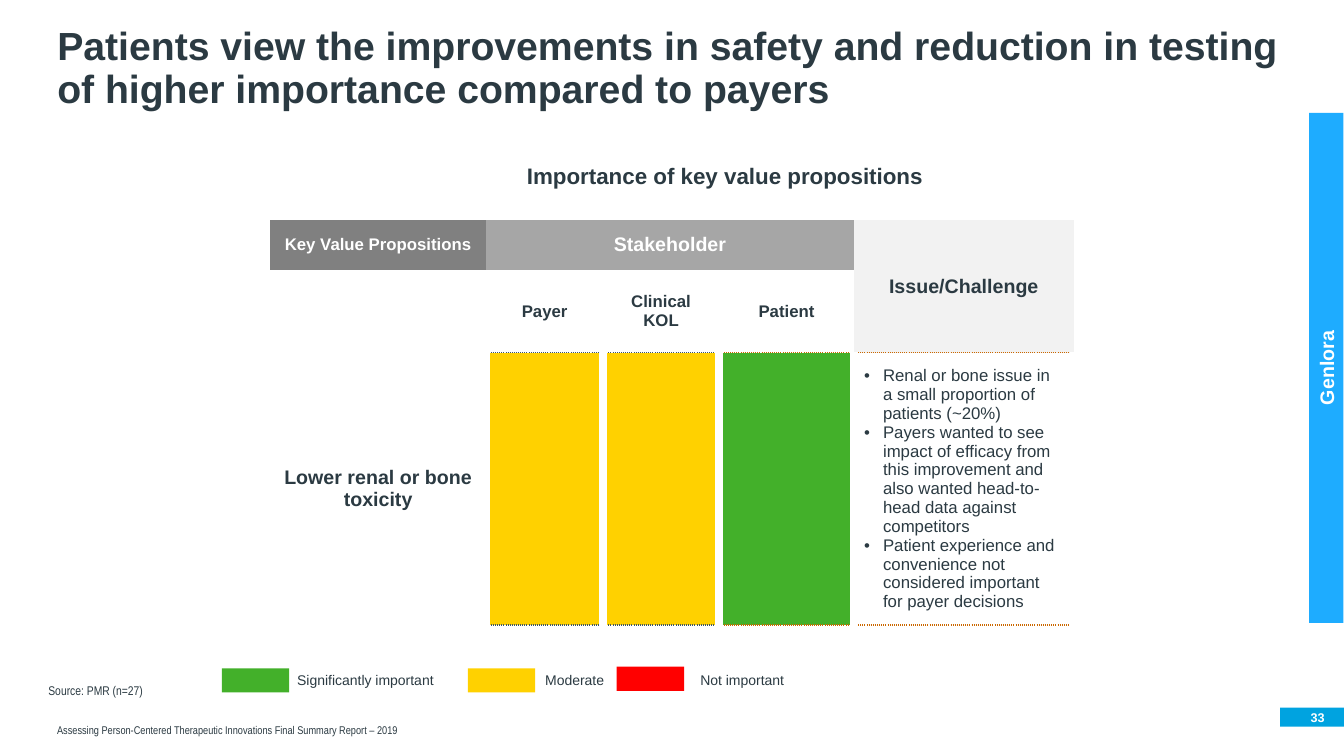
from pptx import Presentation
from pptx.dml.color import RGBColor
from pptx.enum.shapes import MSO_SHAPE
from pptx.enum.text import MSO_ANCHOR, PP_ALIGN
from pptx.oxml import parse_xml
from pptx.oxml.ns import nsdecls
from pptx.util import Cm, Pt

RECTANGLE = MSO_SHAPE.RECTANGLE
TOP, MIDDLE, BOTTOM = MSO_ANCHOR.TOP, MSO_ANCHOR.MIDDLE, MSO_ANCHOR.BOTTOM
LEFT, CENTER, RIGHT = PP_ALIGN.LEFT, PP_ALIGN.CENTER, PP_ALIGN.RIGHT

INK = RGBColor(0x2B, 0x3A, 0x42)
WHITE = RGBColor(0xFF, 0xFF, 0xFF)
DARK_GRAY = RGBColor(0x80, 0x80, 0x80)
MID_GRAY = RGBColor(0xA6, 0xA6, 0xA6)
PALE_GRAY = RGBColor(0xF2, 0xF2, 0xF2)
GREEN = RGBColor(0x43, 0xB0, 0x2A)
YELLOW = RGBColor(0xFF, 0xD1, 0x00)
RED = RGBColor(0xFF, 0x00, 0x00)
BADGE_BLUE = RGBColor(0x00, 0xA3, 0xE0)
TAB_BLUE = RGBColor(0x1E, 0xAC, 0xFF)
SLATE = RGBColor(0x3F, 0x57, 0x65)
ORANGE = RGBColor(0xCB, 0x68, 0x01)

NO_STYLE = "{2D5ABB26-0587-4C30-8999-92F81FD0307C}"
GAP = (WHITE, 6, "solid")
SLATE_DOTS = (SLATE, 1, "sysDot")
ORANGE_DOTS = (ORANGE, 1, "sysDot")


class SlideBuilder:
    """Holds the text style and the slide being built."""

    def __init__(self, page):
        self.page = page
        self.style = {"name": "Arial", "size": 12, "bold": False, "color": INK}

    def fill_text(self, frame, lines, align=LEFT, bullet=False, spacing=None, **changes):
        look = {**self.style, **changes}
        color = look.pop("color")
        look["size"] = Pt(look["size"])
        for number, line in enumerate(lines):
            para = frame.paragraphs[0] if number == 0 else frame.add_paragraph()
            para.alignment = align
            if spacing:
                para.line_spacing = spacing
            if bullet:
                self.add_bullet(para)
            span = para.add_run()
            span.text = line
            for key, value in look.items():
                setattr(span.font, key, value)
            span.font.color.rgb = color

    def add_bullet(self, para):
        indent = Cm(0.48)
        properties = para._p.get_or_add_pPr()
        properties.set("marL", str(indent))
        properties.set("indent", str(-indent))
        properties.append(parse_xml(f'<a:buFont {nsdecls("a")} typeface="Arial"/>'))
        properties.append(parse_xml(f'<a:buChar {nsdecls("a")} char="•"/>'))

    def title(self, text, left, top, width, height):
        box = self.page.shapes.title
        place = {"left": left, "top": top, "width": width, "height": height}
        for key, value in place.items():
            setattr(box, key, Cm(value))
        box.text_frame.vertical_anchor = BOTTOM
        self.fill_text(box.text_frame, [text], spacing=0.9, size=28, bold=True)

    def text(self, text, left, top, width, height, anchor=TOP, margin=None, **look):
        box = self.page.shapes.add_textbox(Cm(left), Cm(top), Cm(width), Cm(height))
        frame = box.text_frame
        frame.word_wrap = True
        frame.vertical_anchor = anchor
        if margin is not None:
            for side in ("left", "top", "right", "bottom"):
                setattr(frame, f"margin_{side}", Cm(margin))
        self.fill_text(frame, [text], **look)

    def bar(self, color, left, top, width, height):
        bar = self.page.shapes.add_shape(
            RECTANGLE, Cm(left), Cm(top), Cm(width), Cm(height))
        bar.shadow.inherit = False
        bar.fill.solid()
        bar.fill.fore_color.rgb = color
        bar.line.fill.background()
        return bar

    def table(self, left, top, widths, heights):
        frame = self.page.shapes.add_table(
            len(heights), len(widths), Cm(left), Cm(top),
            Cm(sum(widths)), Cm(sum(heights)))
        frame.element.xpath(".//a:tableStyleId")[0].text = NO_STYLE
        table = frame.table
        table.first_row = table.horz_banding = False
        for column, width in zip(table.columns, widths):
            column.width = Cm(width)
        for row, height in zip(table.rows, heights):
            row.height = Cm(height)
        for cell in table.iter_cells():
            cell.fill.background()
        return table

    def cell(self, cell, lines=(), fill=None, borders=None, **look):
        cell.vertical_anchor = MIDDLE
        if fill is not None:
            cell.fill.solid()
            cell.fill.fore_color.rgb = fill
        self.fill_text(cell.text_frame, lines, **look)
        # Borders come first in the cell properties, in the order L, R, T, B
        properties = cell._tc.get_or_add_tcPr()
        for position, (side, (color, width, dash)) in enumerate((borders or {}).items()):
            properties.insert(position, parse_xml(
                f'<a:ln{side} {nsdecls("a")} w="{Pt(width)}"><a:solidFill>'
                f'<a:srgbClr val="{color}"/></a:solidFill>'
                f'<a:prstDash val="{dash}"/></a:ln{side}>'))


def main():
    deck = Presentation()
    deck.slide_width, deck.slide_height = Cm(33.87), Cm(19.05)
    page = deck.slides.add_slide(deck.slide_layouts[5])
    builder = SlideBuilder(page)

    # Footer and page number
    builder.text("Assessing Person-Centered Therapeutic Innovations Final Summary Report – 2019",
                 1.19, 17.75, 24.54, 0.94, anchor=BOTTOM, name="Arial Narrow", size=8)
    builder.bar(BADGE_BLUE, 32.26, 17.83, 1.61, 0.48)
    builder.text("33", 32.26, 17.83, 1.12, 0.48, anchor=MIDDLE, margin=0,
                 align=RIGHT, size=9, bold=True, color=WHITE)

    # Title and table heading
    builder.title("Patients view the improvements in safety and reduction in testing "
                  "of higher importance compared to payers", 1.19, 0.81, 31.5, 2.13)
    builder.text("Importance of key value propositions", 13.03, 3.96, 11.15, 0.94,
                 size=16, bold=True)

    # Table header
    table = builder.table(6.81, 5.54, [5.44, 2.95, 2.92, 3.4, 5.54], [1.27, 2.08, 6.43])
    table.cell(0, 1).merge(table.cell(0, 3))
    table.cell(0, 4).merge(table.cell(1, 4))
    strong = {"align": CENTER, "bold": True}
    builder.cell(table.cell(0, 0), ["Key Value Propositions"], DARK_GRAY,
                 color=WHITE, **strong)
    builder.cell(table.cell(0, 1), ["Stakeholder"], MID_GRAY,
                 size=14, color=WHITE, **strong)
    builder.cell(table.cell(0, 4), ["Issue/Challenge"], PALE_GRAY,
                 {"B": ORANGE_DOTS}, size=14, **strong)

    # Ratings by stakeholder
    ratings = [("Payer", YELLOW, SLATE_DOTS), ("Clinical KOL", YELLOW, SLATE_DOTS),
               ("Patient", GREEN, ORANGE_DOTS)]
    for column, (stakeholder, rating, dots) in enumerate(ratings, start=1):
        builder.cell(table.cell(1, column), [stakeholder], borders={"B": dots}, **strong)
        builder.cell(table.cell(2, column), fill=rating,
                     borders={"L": GAP, "R": GAP, "T": dots, "B": dots})

    # Proposition and its issues
    builder.cell(table.cell(2, 0), ["Lower renal or bone toxicity"],
                 borders={"R": GAP}, size=14, **strong)
    issues = [
        "Renal or bone issue in a small proportion of patients (~20%)",
        "Payers wanted to see impact of efficacy from this improvement and also "
        "wanted head-to-head data against competitors",
        "Patient experience and convenience not considered important for payer decisions",
    ]
    builder.cell(table.cell(2, 4), issues, bullet=True,
                 borders={"L": GAP, "R": GAP, "T": ORANGE_DOTS, "B": ORANGE_DOTS})

    # Legend
    legend = [("Significantly important", GREEN, 5.59, 16.84, 7.24, 3.96),
              ("Moderate", YELLOW, 11.79, 16.84, 13.49, 4.5),
              ("Not important", RED, 15.54, 16.8, 17.4, 4.22)]
    for label, color, left, top, label_left, label_width in legend:
        builder.bar(color, left, top, 1.7, 0.61)
        builder.text(label, label_left, 16.79, label_width, 0.69, size=10)

    # Source and side tab
    builder.text("Source: PMR (n=27)", 0.97, 17.09, 5.08, 0.64,
                 name="Arial Narrow", size=9)
    tab = builder.bar(TAB_BLUE, 27, 8.84, 12.85, 0.86)
    tab.rotation = 270
    builder.fill_text(tab.text_frame, ["Genlora"], size=14, color=WHITE, **strong)

    deck.save("out.pptx")


if __name__ == "__main__":
    main()
